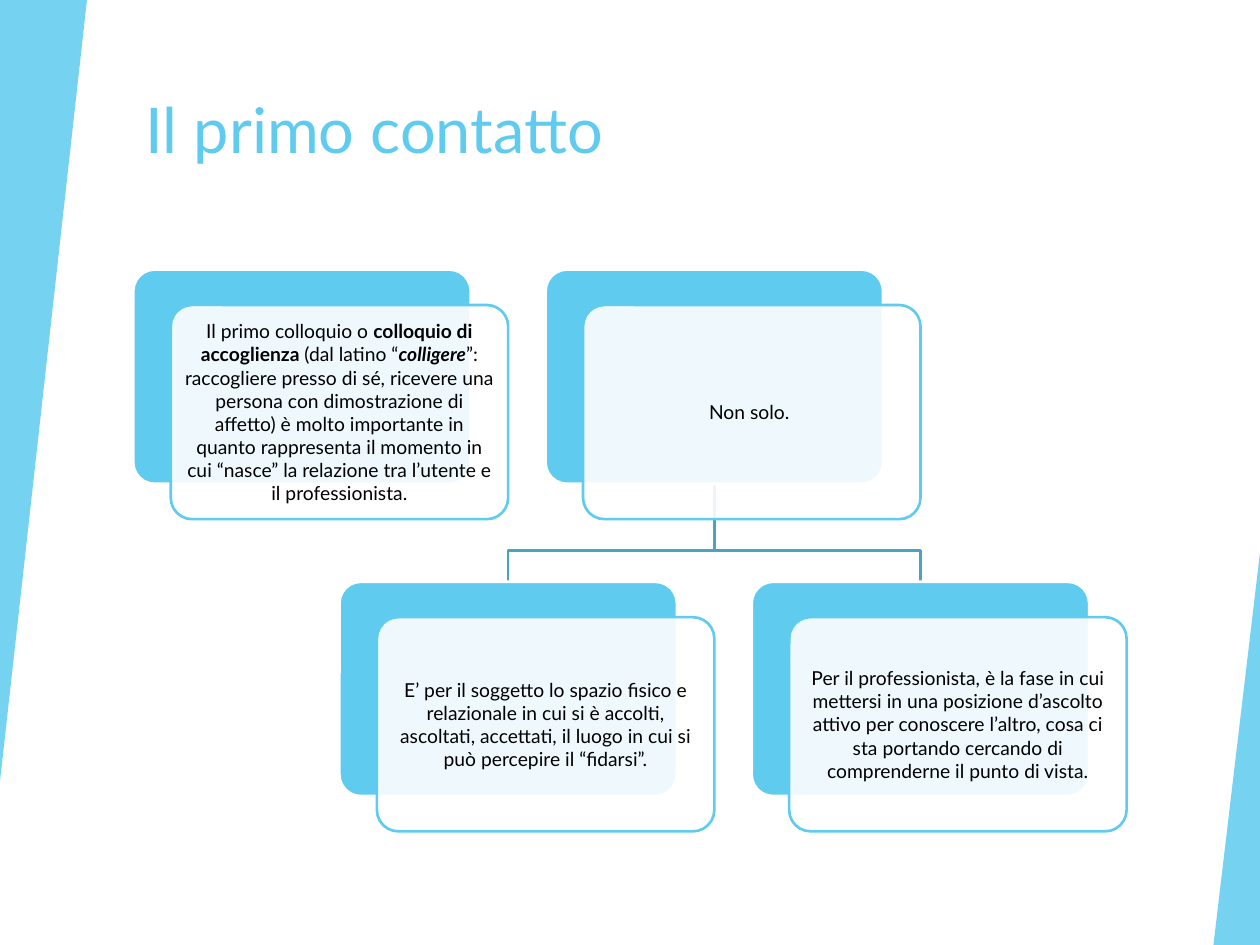
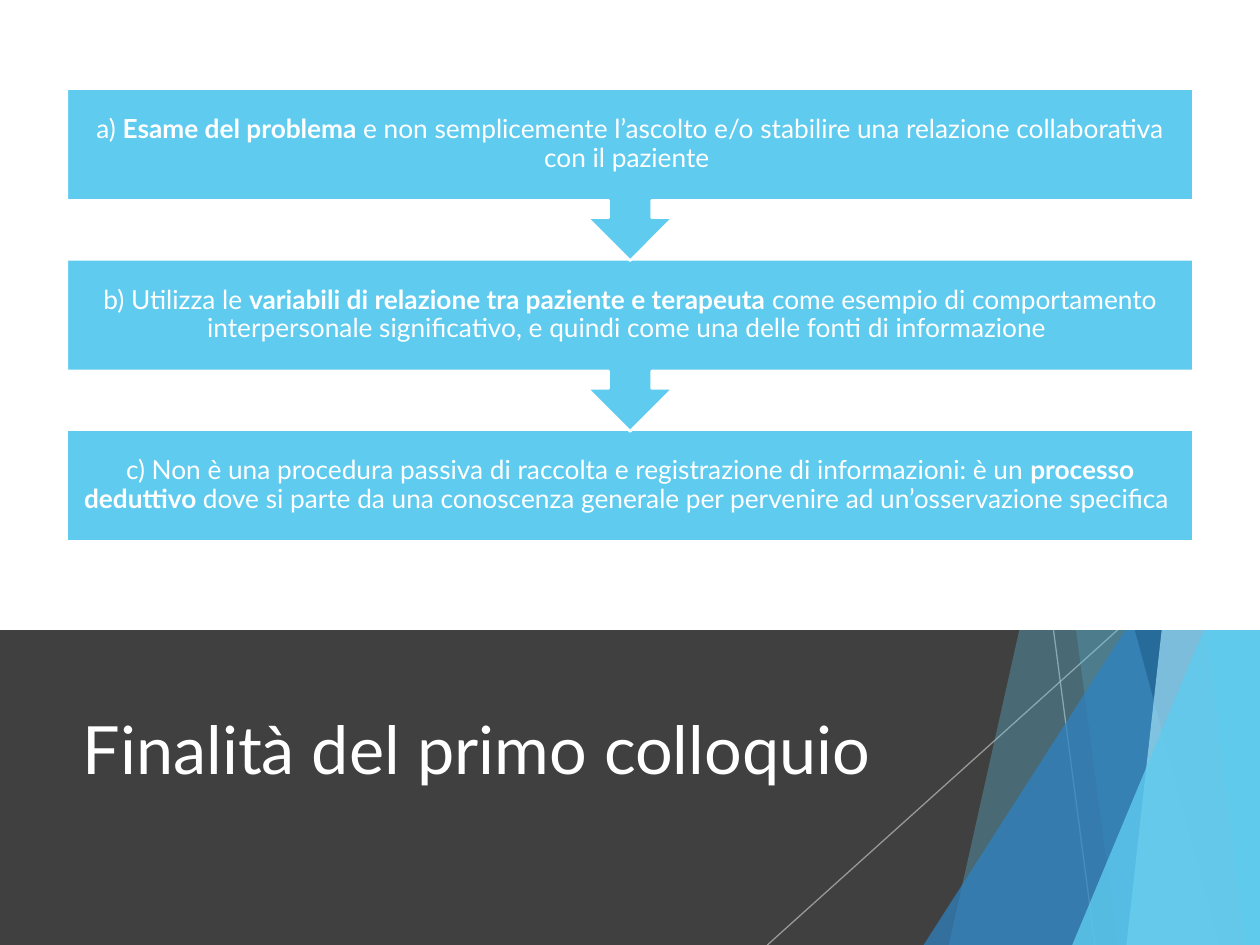
from dataclasses import dataclass
from typing import NamedTuple

from pptx import Presentation
from pptx.dml.color import RGBColor as RGB
from pptx.enum.shapes import MSO_CONNECTOR as Wire, MSO_SHAPE as Kind
from pptx.enum.text import MSO_ANCHOR as Anchor, PP_ALIGN as Align
from pptx.oxml.ns import qn
from pptx.oxml.xmlchemy import OxmlElement as Node
from pptx.util import Pt

WIDE, HIGH = 720, 540
INK = {
    "sky": "5FCBEF", "pale": "9FE0F5", "blue": "2E83C3", "navy": "226292",
    "wire": "4CA3BF", "ray": "BFBFBF", "dark": "404040",
    "white": "FFFFFF", "black": "000000",
}


class Run(NamedTuple):
    text: str
    bold: bool = False
    italic: bool = False


class Box(NamedTuple):
    left: float
    top: float
    width: float
    height: float

    def pts(self) -> list:
        return [Pt(size) for size in self]


@dataclass
class Style:
    size: float
    ink: str
    align: Align = Align.LEFT
    anchor: Anchor = Anchor.MIDDLE
    pad: tuple = (7.2, 3.6)
    space: float = 1.0


@dataclass
class Facet:
    """Area from a slanted left side to the right and bottom slide edges."""
    head: float
    foot: float
    ink: str
    alpha: int
    rise: float = 0


@dataclass
class Card:
    col: float
    row: int
    runs: list

    def box(self) -> Box:
        return Box(76.2 + 235.6 * self.col, 154.1 + 178.4 * self.row, 192.8, 122.4)


def tint(ink: str) -> RGB:
    return RGB.from_string(INK[ink])


def fade(shape, alpha: int) -> None:
    """Set the opacity, in percent, of the first colour of a shape or line."""
    node = Node("a:alpha")
    node.set("val", str(alpha * 1000))
    next(shape.element.spPr.iter(qn("a:srgbClr"))).append(node)


def paint(shape, ink: str, alpha: int = 100, edge: str = ""):
    shape.shadow.inherit = False
    if ink:
        shape.fill.solid()
        shape.fill.fore_color.rgb = tint(ink)
    else:
        shape.fill.background()
    if edge:
        shape.line.color.rgb = tint(edge)
        shape.line.width = Pt(1.5)
    else:
        shape.line.fill.background()
    if alpha < 100:
        fade(shape, alpha)
    return shape


def block(slide, kind: Kind, box: Box, ink: str, alpha: int = 100, edge: str = ""):
    return paint(slide.shapes.add_shape(kind, *box.pts()), ink, alpha, edge)


def write(shape, runs: list, style: Style) -> None:
    frame = shape.text_frame
    side, rim = map(Pt, style.pad)
    form = dict(word_wrap=True, vertical_anchor=style.anchor, margin_left=side,
                margin_right=side, margin_top=rim, margin_bottom=rim)
    for key, val in form.items():
        setattr(frame, key, val)
    para = frame.paragraphs[0]
    para.alignment, para.line_spacing = style.align, style.space
    for item in runs:
        run = para.add_run()
        run.text = item.text
        form = dict(name="Lato", size=Pt(style.size), bold=item.bold, italic=item.italic)
        for key, val in form.items():
            setattr(run.font, key, val)
        run.font.color.rgb = tint(style.ink)


def title(slide, text: str, box: Box, style: Style) -> None:
    write(slide.shapes.add_textbox(*box.pts()), [Run(text)], style)


def line(slide, start: tuple, end: tuple, ink: str, width: float, alpha: int) -> None:
    wire = slide.shapes.add_connector(Wire.STRAIGHT, *map(Pt, start + end))
    wire.line.color.rgb = tint(ink)
    wire.line.width = Pt(width)
    wire.element.spPr.append(Node("a:effectLst"))
    fade(wire, alpha)


def trace(slide, dots: list, close: bool = True):
    (x, y), *rest = [(Pt(x), Pt(y)) for x, y in dots]
    path = slide.shapes.build_freeform(x, y)
    path.add_line_segments(rest, close=close)
    return path.convert_to_shape()


def draw(slide, facet: Facet) -> None:
    if facet.head == WIDE:
        box = Box(facet.foot, facet.rise, WIDE - facet.foot, HIGH - facet.rise)
        block(slide, Kind.ISOSCELES_TRIANGLE, box, facet.ink, facet.alpha).adjustments[0] = 1
        return
    dots = [(facet.head, facet.rise), (WIDE, facet.rise), (WIDE, HIGH), (facet.foot, HIGH)]
    paint(trace(slide, dots), facet.ink, facet.alpha)


CARDS = [
    Card(0, 0, [
        Run("Il primo colloquio o "),
        Run("colloquio di accoglienza ", True),
        Run("(dal latino “"),
        Run("colligere", True, True),
        Run("”: raccogliere presso di sé, ricevere una persona con dimostrazione di "
            "affetto) è molto importante in quanto rappresenta il momento in cui "
            "“nasce” la relazione tra l’utente e il professionista."),
    ]),
    Card(1, 0, [Run("Non solo. ")]),
    Card(0.5, 1, [
        Run("E’ per il soggetto lo spazio fisico e relazionale in cui si è accolti, "
            "ascoltati, accettati, il luogo in cui si può percepire il “fidarsi”."),
    ]),
    Card(1.5, 1, [
        Run("Per il professionista, è la fase in cui mettersi in una posizione "
            "d’ascolto attivo per conoscere l’altro, cosa ci sta portando cercando "
            "di comprenderne il punto di vista."),
    ]),
]

STEPS = [
    [Run("a) "), Run("Esame del problema ", True),
     Run("e non semplicemente l’ascolto e/o stabilire una relazione collaborativa "
         "con il paziente ")],
    [Run("b) Utilizza le "),
     Run("variabili di relazione tra paziente e terapeuta ", True),
     Run("come esempio di comportamento interpersonale significativo, e quindi come "
         "una delle fonti di informazione ")],
    [Run("c) Non è una procedura passiva di raccolta e registrazione di "
         "informazioni: è un "),
     Run("processo deduttivo ", True),
     Run("dove si parte da una conoscenza generale per pervenire ad "
         "un’osservazione specifica ")],
]

FACETS = [
    Facet(663, 542.2, "sky", 30),
    Facet(567.4, 638.6, "sky", 20),
    Facet(WIDE, 527.8, "blue", 72, 239.8),
    Facet(551.5, 697, "navy", 70),
    Facet(704.2, 643.7, "pale", 70),
    Facet(645.8, 711.4, "sky", 65),
    Facet(WIDE, 612.7, "sky", 80, 283),
]


def join(slide, root: Box, kid: Box) -> None:
    """Trace the bent branch from the root card down to a card below it."""
    rail = 314.6
    start, end = (box.left + box.width / 2 for box in (root, kid))
    dots = [(start, root.top + root.height), (start, rail), (end, rail), (end, kid.top)]
    paint(trace(slide, dots, close=False), "", edge="wire")


def first(slide) -> None:
    title(slide, "Il primo contatto", Box(76.2, 48.2, 602, 86.4),
          Style(36, "sky", anchor=Anchor.TOP))
    wedge = block(slide, Kind.ISOSCELES_TRIANGLE, Box(0, 0, 49.7, 446.4), "sky", 85)
    wedge.rotation = 180
    wedge.adjustments[0] = 1
    draw(slide, Facet(WIDE, 693.4, "sky", 85, 316))

    root, *kids = [card.box() for card in CARDS[1:]]
    for kid in reversed(kids):
        join(slide, root, kid)
    style = Style(11, "black", Align.CENTER, pad=(3.6, 3.6))
    for card in CARDS:
        box = card.box()
        front = box._replace(left=box.left + 21.4, top=box.top + 20.2)
        back = block(slide, Kind.ROUNDED_RECTANGLE, box, "sky", edge="white")
        face = block(slide, Kind.ROUNDED_RECTANGLE, front, "white", 90, "sky")
        for shape in (back, face):
            shape.adjustments[0] = 0.1
        write(face, card.runs, style)


def second(slide) -> None:
    split = 360
    block(slide, Kind.RECTANGLE, Box(0, split, WIDE, HIGH - split), "dark")
    for head, foot in ((602, 625.7), (638.6, 438.5)):
        line(slide, (head, split), (foot, HIGH), "ray", 0.75, 70)
    for facet in FACETS:
        draw(slide, facet)
    title(slide, "Finalità del primo colloquio", Box(40.2, 375.4, 507.6, 103.7),
          Style(38, "white"))
    block(slide, Kind.RECTANGLE, Box(0, 0, WIDE, split), "white")

    style = Style(15, "white", Align.CENTER, pad=(8.64, 8.64), space=0.9)
    last = len(STEPS) - 1
    for pos, runs in reversed(list(enumerate(STEPS))):
        kind, tall = ((Kind.RECTANGLE, 63.8) if pos == last
                      else (Kind.DOWN_ARROW_CALLOUT, 98.4))
        box = Box(38.2, 50.6 + 97.5 * pos, 643.8, tall)
        write(block(slide, kind, box, "sky", edge="white"), runs, style)


def main() -> None:
    deck = Presentation()
    deck.slide_width, deck.slide_height = Pt(WIDE), Pt(HIGH)
    for build in (first, second):
        build(deck.slides.add_slide(deck.slide_layouts[6]))
    deck.save("out.pptx")


if __name__ == "__main__":
    main()
